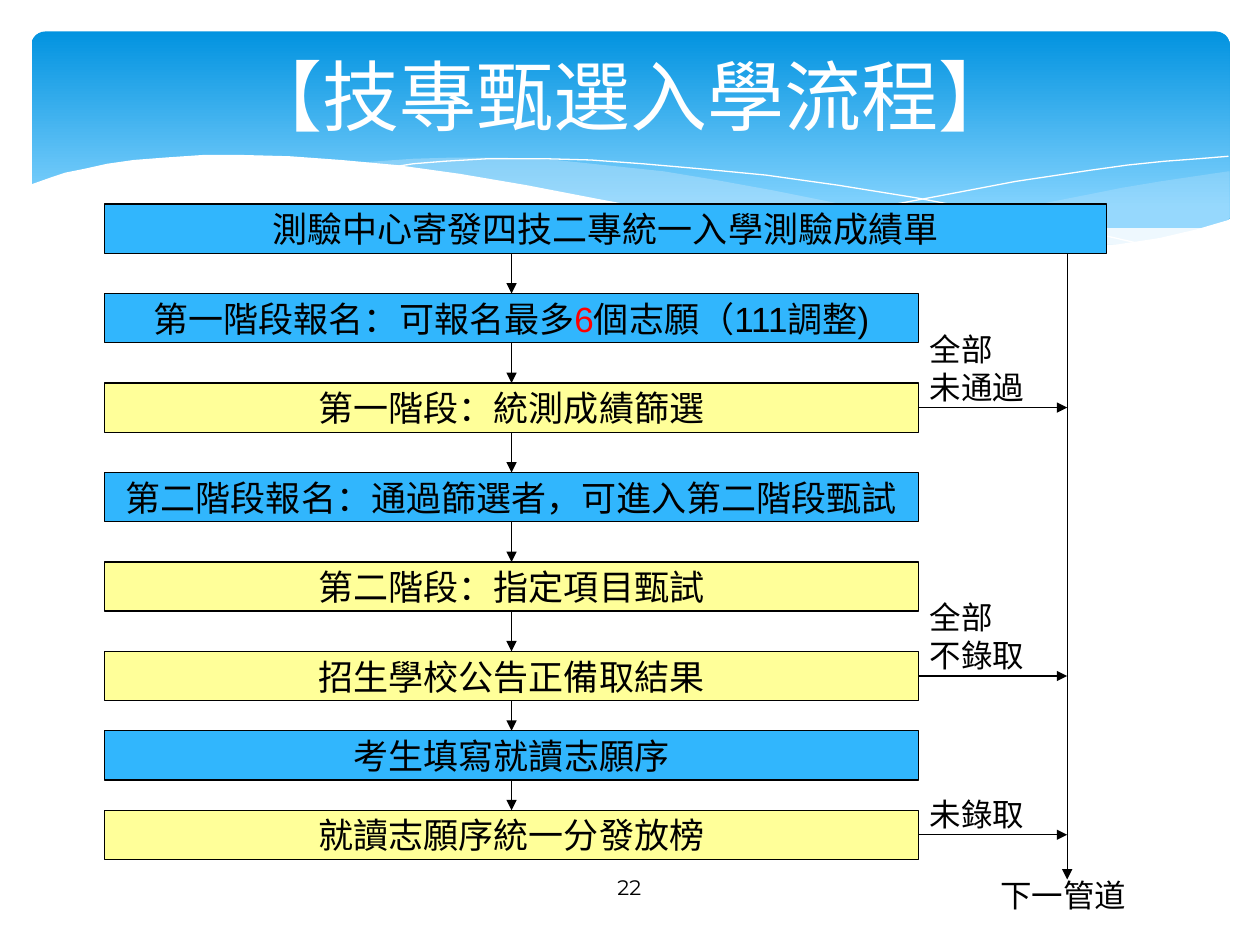
import pptx
import pptx.util
import pptx.dml.color
import pptx.enum.shapes
import pptx.enum.text
import pptx.oxml
import pptx.oxml.ns
import lxml.etree

Inches = pptx.util.Inches
Pt = pptx.util.Pt
ALIGN = pptx.enum.text.PP_ALIGN
MIDDLE = pptx.enum.text.MSO_ANCHOR.MIDDLE

COLORS = {
    "sky_top": "0293E0", "sky_bottom": "83D3FE", "wave": "C6E7FC", "white": "FFFFFF",
    "black": "000000", "red": "FF0000", "applicant": "31B6FD", "school": "FFFF99",
}

TITLE = "【技專甄選入學流程】"
PAGE_NUMBER = "22"
STEPS = [
    ("applicant", ["測驗中心寄發四技二專統一入學測驗成績單"], None),
    ("applicant", ["第一階段報名：可報名最多", "6", "個志願（111調整)"], None),
    ("school", ["第一階段：統測成績篩選"], "全部\v未通過"),
    ("applicant", ["第二階段報名：通過篩選者，可進入第二階段甄試"], None),
    ("school", ["第二階段：指定項目甄試"], None),
    ("school", ["招生學校公告正備取結果"], "全部\v不錄取"),
    ("applicant", ["考生填寫就讀志願序"], None),
    ("school", ["就讀志願序統一分發放榜"], "未錄取"),
]
NEXT_CHANNEL = "下一管道"

LEFT, TOP, STEP_WIDTH, FIRST_WIDTH, STEP_HEIGHT = 0.83, 1.62, 6.46, 7.95, 0.39
PITCH, CLOSE_PITCH, CLOSE_FROM = 0.71, 0.63, 5
EXIT_X, EXIT_BOTTOM = 8.47, 6.98

WAVES = [
    ("wave", 29, [
        (9.75, 1.36), (9.48, 1.4), (9.21, 1.44), (8.91, 1.49), (8.61, 1.55), (8.05, 1.66),
        (7.53, 1.75), (7.06, 1.83), (6.61, 1.89), (6.91, 1.93), (7.32, 1.96), (7.69, 1.99),
        (8.14, 1.99), (8.54, 1.98), (8.89, 1.95), (9.21, 1.89), (9.49, 1.83), (9.76, 1.74),
        (9.76, 1.36)]),
    ("wave", 40, [
        (8.93, 1.95), (8.66, 1.93), (8.07, 1.85), (7.41, 1.75), (6.68, 1.62), (6.13, 1.51),
        (5.69, 1.43), (5.27, 1.36), (4.89, 1.32), (4.41, 1.27), (3.99, 1.25), (3.61, 1.25),
        (3.28, 1.26), (2.86, 1.29), (3.23, 1.33), (3.62, 1.38), (4.04, 1.45), (4.49, 1.54),
        (5.3, 1.69), (5.84, 1.78), (6.34, 1.86), (6.8, 1.92), (7.22, 1.96), (7.73, 1.99),
        (8.18, 2), (8.57, 1.99), (8.93, 1.95)]),
    (None, 100, [
        (3.09, 1.33), (3.28, 1.3), (3.53, 1.28), (3.87, 1.26), (4.33, 1.26), (4.69, 1.27),
        (5.1, 1.3), (5.56, 1.34), (6.08, 1.39), (6.65, 1.47), (7.27, 1.57), (7.95, 1.7),
        (8.68, 1.85), (9.07, 1.94)]),
    (None, 100, [
        (6.13, 1.82), (6.52, 1.74), (6.95, 1.65), (7.48, 1.55), (8.06, 1.44), (8.66, 1.35),
        (8.95, 1.31), (9.24, 1.28), (9.51, 1.26), (9.75, 1.24)]),
    ("white", 100, [
        (9.77, 1.74), (9.5, 1.82), (9.2, 1.89), (8.87, 1.94), (8.5, 1.97), (8.09, 1.99),
        (7.61, 1.97), (7.08, 1.93), (6.47, 1.87), (5.79, 1.77), (5.29, 1.68), (4.75, 1.58),
        (4.18, 1.47), (3.65, 1.38), (3.15, 1.31), (2.71, 1.27), (2.3, 1.24), (1.93, 1.23),
        (1.61, 1.23), (1.32, 1.25), (1.06, 1.27), (0.85, 1.3), (0.67, 1.34), (0.52, 1.37),
        (0.4, 1.41), (0.23, 1.47), (0.23, 2.41), (9.77, 2.41)]),
]


def rgb(name):
    """Return the named colour."""
    return pptx.dml.color.RGBColor.from_string(COLORS[name])


def set_font(paragraph, size, name="Arial", color="black"):
    """Format a whole paragraph."""
    paragraph.font.size = Pt(size)
    paragraph.font.name = name
    paragraph.font.color.rgb = rgb(color)


def add_backdrop(shapes):
    """Draw the gradient banner and its waves."""
    banner = shapes.add_shape(pptx.enum.shapes.MSO_SHAPE.ROUNDED_RECTANGLE,
                              Inches(0.25), Inches(0.25), Inches(9.51), Inches(1.56))
    banner.adjustments[0] = 0.07
    banner.shadow.inherit = False
    banner.line.fill.background()
    banner.fill.gradient()
    banner.fill.gradient_angle = 270
    for stop, position, color in zip(banner.fill.gradient_stops, (0, 0.9), ("sky_top", "sky_bottom")):
        stop.position = position
        stop.color.rgb = rgb(color)
    for color, opacity, points in WAVES:
        corners = [(Inches(x), Inches(y)) for x, y in points]
        builder = shapes.build_freeform(*corners[0])
        builder.add_line_segments(corners[1:], close=color is not None)
        wave = builder.convert_to_shape()
        wave.shadow.inherit = False
        if color is None:
            wave.fill.background()
            wave.line.color.rgb = rgb("white")
            wave.line.width = Pt(0)
            continue
        wave.line.fill.background()
        wave.fill.solid()
        wave.fill.fore_color.rgb = rgb(color)
        if opacity < 100:
            fill_color = wave._element.spPr.find(".//" + pptx.oxml.ns.qn("a:srgbClr"))
            alpha = lxml.etree.SubElement(fill_color, pptx.oxml.ns.qn("a:alpha"))
            alpha.set("val", str(opacity * 1000))


def add_text(shapes, text, left, top, width, height, size=18, name="Arial", align=ALIGN.LEFT):
    """Add a one-paragraph text box."""
    box = shapes.add_textbox(Inches(left), Inches(top), Inches(width), Inches(height))
    box.text_frame.word_wrap = True
    paragraph = box.text_frame.paragraphs[0]
    paragraph.text = text
    paragraph.alignment = align
    set_font(paragraph, size, name)
    return box


def add_step(shapes, kind, parts, top, width):
    """Add one step of the flow."""
    step = shapes.add_shape(pptx.enum.shapes.MSO_SHAPE.RECTANGLE, Inches(LEFT), Inches(top),
                            Inches(width), Inches(STEP_HEIGHT))
    step.shadow.inherit = False
    step.fill.solid()
    step.fill.fore_color.rgb = rgb(kind)
    step.line.color.rgb = rgb("black")
    step.line.width = Pt(0.75)
    step.text_frame.word_wrap = False
    step.text_frame.vertical_anchor = MIDDLE
    paragraph = step.text_frame.paragraphs[0]
    paragraph.alignment = ALIGN.CENTER
    set_font(paragraph, 20)
    for part in parts:
        run = paragraph.add_run()
        run.text = part
        run.font.color.rgb = rgb("red" if part.isdigit() else "black")
    return step


def add_arrow(shapes, start_x, start_y, end_x, end_y):
    """Add a thin black arrow."""
    arrow = shapes.add_connector(pptx.enum.shapes.MSO_CONNECTOR.STRAIGHT, Inches(start_x),
                                 Inches(start_y), Inches(end_x), Inches(end_y))
    arrow.line.color.rgb = rgb("black")
    arrow.line.width = Pt(0.75)
    tail = lxml.etree.SubElement(arrow.line._get_or_add_ln(), pptx.oxml.ns.qn("a:tailEnd"))
    tail.set("type", "triangle")
    lxml.etree.SubElement(arrow._element.spPr, pptx.oxml.ns.qn("a:effectLst"))
    return arrow


def add_flow(shapes):
    """Lay out the steps, their arrows and the exits."""
    center, right = LEFT + STEP_WIDTH / 2, LEFT + STEP_WIDTH
    previous = None
    for index, (kind, parts, exit_label) in enumerate(STEPS):
        top = TOP + PITCH * min(index, CLOSE_FROM) + CLOSE_PITCH * max(index - CLOSE_FROM, 0)
        step = add_step(shapes, kind, parts, top, STEP_WIDTH if index else FIRST_WIDTH)
        if index:
            gap = (PITCH if index <= CLOSE_FROM else CLOSE_PITCH) - STEP_HEIGHT
            arrow = add_arrow(shapes, center, top - gap, center, top)
            if index > 1:
                arrow.begin_connect(previous, 2)
            arrow.end_connect(step, 0)
        if exit_label:
            middle = top + STEP_HEIGHT / 2
            add_arrow(shapes, right, middle, EXIT_X, middle).begin_connect(step, 3)
            height = 0.7 if "\v" in exit_label else 0.4
            add_text(shapes, exit_label, right - 0.01, top + 0.23 - height, 0.96, height)
        previous = step
    add_arrow(shapes, EXIT_X, TOP + STEP_HEIGHT, EXIT_X, EXIT_BOTTOM)
    add_text(shapes, NEXT_CHANNEL, 7.84, 6.9, 1.34, 0.4, name="Noto Sans CJK SC")


def main():
    """Build the admission flow slide."""
    presentation = pptx.Presentation()
    presentation.slide_width, presentation.slide_height = Inches(10), Inches(7.5)
    slide = presentation.slides.add_slide(presentation.slide_layouts[5])
    shapes = slide.shapes
    add_backdrop(shapes)
    title = shapes.title
    shapes._spTree.append(title._element)
    title.left, title.top, title.width, title.height = map(Inches, (0.62, 0.25, 8.77, 1))
    title.text_frame.text = TITLE
    title.text_frame.vertical_anchor = MIDDLE
    title.text_frame.paragraphs[0].alignment = ALIGN.CENTER
    set_font(title.text_frame.paragraphs[0], 44, "Cabin", "white")
    number = add_text(shapes, PAGE_NUMBER, 4.36, 6.84, 1.27, 0.4, 12, "Montserrat", ALIGN.CENTER)
    number.text_frame.vertical_anchor = MIDDLE
    add_flow(shapes)
    presentation.save("out.pptx")


if __name__ == "__main__":
    main()
